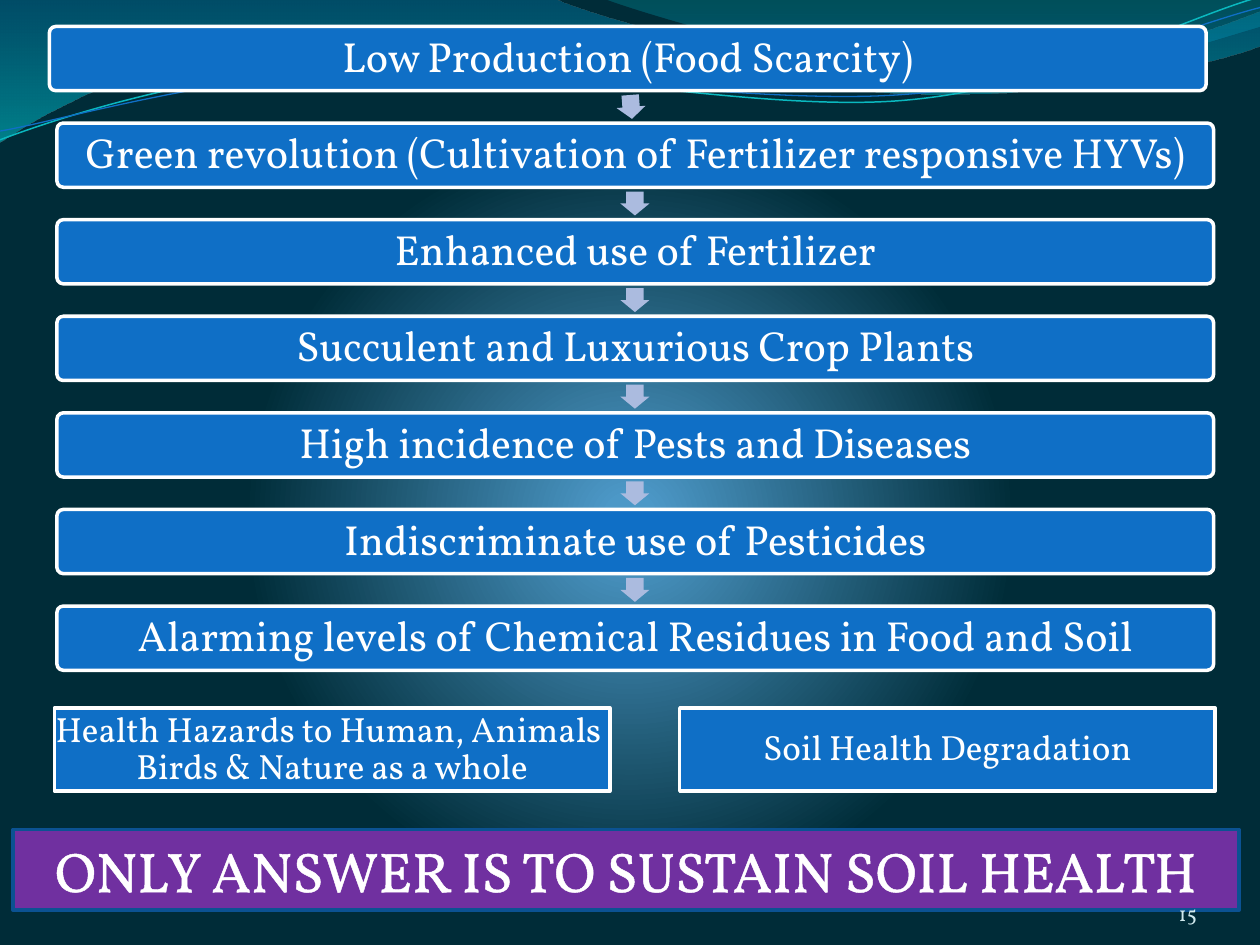
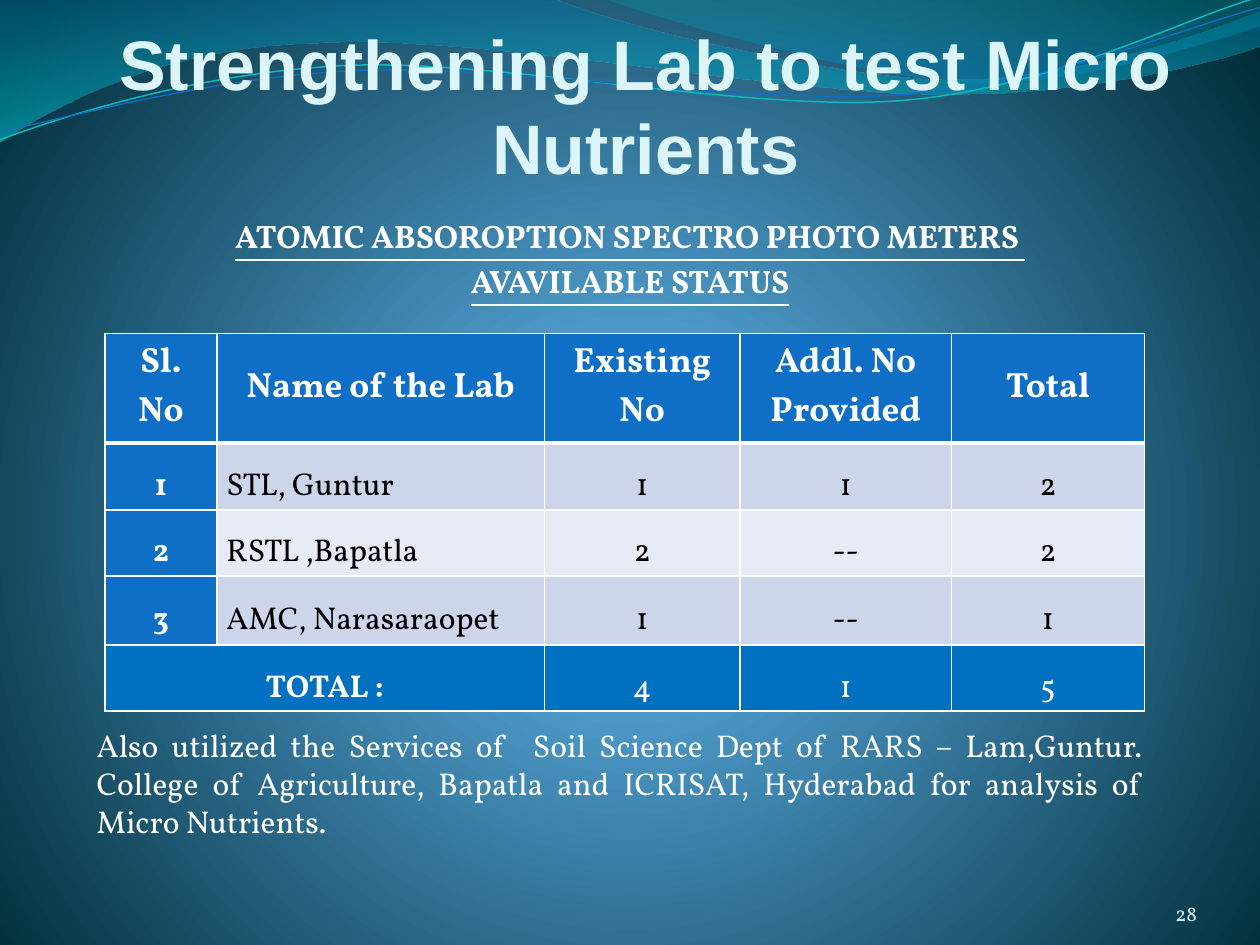
from pptx import Presentation
from pptx.dml.color import RGBColor
from pptx.enum.shapes import MSO_SHAPE
from pptx.enum.text import MSO_ANCHOR, MSO_AUTO_SIZE, PP_ALIGN
from pptx.oxml import parse_xml
from pptx.oxml.ns import nsdecls, qn
from pptx.util import Pt

RECT, ROUND, ARROW = MSO_SHAPE.RECTANGLE, MSO_SHAPE.ROUNDED_RECTANGLE, MSO_SHAPE.RIGHT_ARROW
LEFT, MID, RIGHT, JUST = PP_ALIGN.LEFT, PP_ALIGN.CENTER, PP_ALIGN.RIGHT, PP_ALIGN.JUSTIFY
TOP, CENTER, BOTTOM = MSO_ANCHOR.TOP, MSO_ANCHOR.MIDDLE, MSO_ANCHOR.BOTTOM
FIXED = MSO_AUTO_SIZE.NONE

# Shared look
FONT = "Vollkorn"
WHITE, BLACK, BLUE, SUM = "FFFFFF", "000000", "0F6FC6", "0070C0"
BANDS = ("CCD5EA", "E7EBF5")
PADS = (7.2, 3.6, 7.2, 3.6)
GLOW = '<a:path path="circle"><a:fillToRect l="10000" t="110000" r="10000" b="100000"/></a:path>'
DOWN = '<a:lin ang="5400000" scaled="1"/>'

# Waves in points: two numbers draw a line, six a curve
FILLS = [
    ([(0, "0074A1", 45), (100, "00C6CF", 55)],
     [(0, 0), (316.8, -0.7), (342.7, 12.2, 478.1, 45.4, 545.8, 45.4),
      (614.2, 45.4, 689.8, 18.7, 720, 6.5), (720.7, 25.9),
      (707.8, 31.7, 626.4, 54.7, 537.1, 54), (447.8, 54, 275, 20.2, 185, 24.5),
      (92.9, 25.9, 33.1, 59.8, -0.7, 81.4)]),
    ([(0, "00A1A9", 30), (80, "008BBF", 45)],
     [(344.9, -0.7), (366.5, 7.9, 491, 44.6, 553.7, 46.8),
      (616.3, 49.7, 691.9, 23, 720, 15.1), (720, 0)]),
]
LINES = [
    ("0AB8BF", 0.85,
     [(0, 79.9), (34.6, 67, 113.8, 41, 199.4, 37.4),
      (284.4, 33.8, 427, 64.1, 513.4, 57.6), (599.8, 51.1, 675.4, 10.8, 718.6, -1.4)]),
    (BLUE, 0.75,
     [(0, 74.9), (33.8, 69.1, 118.1, 44, 203.8, 40.3),
      (290.2, 36.7, 429.8, 60.5, 516.2, 54), (601.9, 48.2, 677.5, 15.1, 720, 4.3)]),
]

# Content
STEPS = [
    "Low Production (Food Scarcity)",
    "Green revolution (Cultivation of Fertilizer responsive HYVs)",
    "Enhanced use of Fertilizer",
    "Succulent and Luxurious Crop Plants",
    "High incidence of Pests and Diseases",
    "Indiscriminate use of Pesticides",
    "Alarming levels of Chemical Residues in Food and Soil",
]
ENDS = [
    ("Health Hazards to Human, Animals  Birds & Nature as a whole", 31, 317.5),
    ("Soil Health Degradation", 388.4, 306),
]
ANSWER = "ONLY ANSWER IS TO SUSTAIN SOIL HEALTH"
TITLE = "Strengthening Lab to test Micro Nutrients"
HEADS = ["ATOMIC ABSOROPTION SPECTRO PHOTO METERS ", "AVAVILABLE STATUS"]
LABS = [
    ("Sl. No", "Name of the Lab", "Existing No", "Addl. No Provided", "Total"),
    ("1", "STL, Guntur", "1", "1", "2"),
    ("2", "RSTL ,Bapatla", "2", "--", "2"),
    ("3", "AMC, Narasaraopet", "1", "--", "1"),
    ("TOTAL :", "", "4", "1", "5"),
]
WIDTHS = (64, 187.2, 111.6, 121, 110.2)
HEIGHTS = (62.6, 38.2, 30.2, 39.6, 30.2)
NOTE = ("Also utilized the Services of  Soil Science Dept of RARS – Lam,Guntur. "
        "College of Agriculture, Bapatla and ICRISAT, Hyderabad for analysis of "
        "Micro Nutrients.")


def rgb(code):
    return RGBColor.from_string(code)


def place(at):
    return [Pt(v) for v in at]


def blend(stops, shade):
    marks = "".join(
        f'<a:gs pos="{pos * 1000}"><a:srgbClr val="{code}"><a:alpha val="{alpha * 1000}"/>'
        f'</a:srgbClr></a:gs>' for pos, code, alpha in stops)
    return parse_xml(f'<a:gradFill {nsdecls("a")} rotWithShape="1"><a:gsLst>{marks}</a:gsLst>'
                     f'{shade}</a:gradFill>')


def stroke(tag, width):
    return parse_xml(f'<a:{tag} {nsdecls("a")} w="{Pt(width)}"><a:solidFill>'
                     f'<a:srgbClr val="{WHITE}"/></a:solidFill></a:{tag}>')


def swap(parent, grad):
    parent.replace(parent.find(qn("a:solidFill")), grad)


def back(slide, stops):
    slide.background.fill.solid()
    swap(slide.element.find(".//" + qn("p:bgPr")), blend(stops, GLOW))


def style(para, size, color=WHITE, align=MID, bold=False, face=FONT, space=None):
    para.alignment = align
    para.line_spacing = space
    font = para.font
    font.name, font.size, font.bold = face, Pt(size), bold
    font.color.rgb = rgb(color)


def setup(frame, pads, anchor, wrap=True):
    frame.word_wrap = wrap
    frame.auto_size = FIXED
    frame.vertical_anchor = anchor
    (frame.margin_left, frame.margin_top,
     frame.margin_right, frame.margin_bottom) = place(pads)


def box(slide, kind, at, fill, line=None):
    shape = slide.shapes.add_shape(kind, *place(at))
    shape.shadow.inherit = False
    shape.fill.solid()
    shape.fill.fore_color.rgb = rgb(fill)
    if line:
        shape.line.color.rgb = rgb(line)
        shape.line.width = Pt(2)
    else:
        shape.line.fill.background()
    return shape


def label(shape, text, size, pad=0, space=None, wrap=True):
    setup(shape.text_frame, (pad, 0, pad, 0), CENTER, wrap)
    para = shape.text_frame.paragraphs[0]
    para.text = text
    style(para, size, space=space)
    return para


def write(slide, at, text, size, color, align, anchor, pads=(0, 0, 0, 0)):
    frame = slide.shapes.add_textbox(*place(at)).text_frame
    setup(frame, pads, anchor)
    frame.paragraphs[0].text = text
    style(frame.paragraphs[0], size, color, align)


def page(slide, number):
    write(slide, (624, 500.2, 60, 28.8), number, 12, "D1EAEE", RIGHT, BOTTOM)


def curve(slide, parts, close):
    """Join the end points, then bend the segments that have control points."""
    ends = [place(part[-2:]) for part in parts]
    left, top = (min(axis) for axis in zip(*ends))
    pen = slide.shapes.build_freeform(*ends[0])
    pen.add_line_segments(ends[1:], close=close)
    shape = pen.convert_to_shape()
    shape.shadow.inherit = False
    for part, seg in zip(parts[1:], list(shape.element.iter(qn("a:lnTo")))):
        if len(part) == 6:
            dots = "".join(f'<a:pt x="{Pt(x) - left}" y="{Pt(y) - top}"/>'
                           for x, y in zip(part[0::2], part[1::2]))
            bend = parse_xml(f'<a:cubicBezTo {nsdecls("a")}>{dots}</a:cubicBezTo>')
            seg.getparent().replace(seg, bend)
    return shape


def waves(slide, master):
    """Draw the waves, then hand them to the master so every slide shows them."""
    made = []
    for stops, parts in FILLS:
        shape = curve(slide, parts, True)
        shape.fill.solid()
        shape.line.fill.background()
        swap(shape.element.spPr, blend(stops, DOWN))
        made.append(shape)
    for color, width, parts in LINES:
        shape = curve(slide, parts, False)
        shape.fill.background()
        shape.line.color.rgb = rgb(color)
        shape.line.width = Pt(width)
        made.append(shape)
    tree = master.element.find(".//" + qn("p:spTree"))
    for i, shape in enumerate(made):
        tree.insert(2 + i, shape.element)


def edge(cell, **widths):
    props = cell._tc.get_or_add_tcPr()
    for i, side in enumerate("LRTB"):
        props.insert(i, stroke("ln" + side, widths.get(side, 1)))


def chain(slide):
    # Steps and the arrows between them
    for i, text in enumerate(STEPS):
        shift = 0 if i else -4.3
        top = 15.1 + 55.2 * i
        bar = box(slide, ROUND, (32.5 + shift, top, 661, 36.7), BLUE, WHITE)
        bar.adjustments[0] = 0.1
        label(bar, text, 24, 7.2, 0.9)
        if i < len(STEPS) - 1:
            wide, high = 13.7, 16.6
            mid = 362.8 if i else 360.6
            arrow = box(slide, ARROW, (mid - wide / 2, top + 46 - high / 2, wide, high), "ABBBDF")
            arrow.adjustments[0] = 0.6
            arrow.rotation = 90 if i else 85.5
    # Results and answer
    for text, left, wide in ENDS:
        label(box(slide, RECT, (left, 404.6, wide, 47.5), BLUE, WHITE), text, 20, space=0.9)
    banner = box(slide, RECT, (7.5, 474, 700.6, 46), "7030A0", "0B5292")
    para = label(banner, ANSWER, 32, wrap=False)
    para.runs[0].font._element.insert(0, stroke("ln", 1.45))


def grid(slide):
    rows, cols = len(LABS), len(WIDTHS)
    at = (60, 190.6, sum(WIDTHS), sum(HEIGHTS))
    table = slide.shapes.add_table(rows, cols, *place(at)).table
    for col, wide in zip(table.columns, WIDTHS):
        col.width = Pt(wide)
    for r, high in enumerate(HEIGHTS):
        table.rows[r].height = Pt(high)
        head, last = r == 0, r == rows - 1
        for c in range(cols):
            cell = table.cell(r, c)
            key = head or c == 0
            fill = SUM if last else BLUE if key else BANDS[(r - 1) % 2]
            cell.fill.solid()
            cell.fill.fore_color.rgb = rgb(fill)
            cell.vertical_anchor = CENTER
            cell.margin_left = cell.margin_right = Pt(5.4)
            cell.margin_top = cell.margin_bottom = 0
            para = cell.text_frame.paragraphs[0]
            para.text = LABS[r][c]
            style(para, 20 if head else 18, WHITE if key or last else BLACK,
                  LEFT if c == 1 and not head else MID, key, space=None if head else 1.5)
            edge(cell, T=3 if r == 1 else 1, B=3 if head else 1)
    table.cell(rows - 1, 0).merge(table.cell(rows - 1, 1))


def status(slide):
    # Title and heading
    title, body = slide.shapes.title, slide.placeholders[1]
    title.left, title.top, title.width, title.height = place((54, 51.8, 630, 56.2))
    setup(title.text_frame, (0, 3.6, 0, 0), BOTTOM)
    title.text_frame.text = TITLE
    style(title.text_frame.paragraphs[0], 40, "DBF5F9", bold=True, face="Arial")
    body.left, body.top, body.width, body.height = place((36, 119.8, 648, 54))
    setup(body.text_frame, PADS, TOP)
    body.text_frame.text = "\n".join(HEADS)
    for para in body.text_frame.paragraphs:
        style(para, 18.5, bold=True)
        para.font.underline = True
        para.space_before = Pt(3.5)
        props = para._p.get_or_add_pPr()
        props.set("marL", "0")
        props.set("indent", "0")
        props.find(qn("a:defRPr")).addprevious(parse_xml(f'<a:buNone {nsdecls("a")}/>'))
    # Table and note
    grid(slide)
    write(slide, (48.2, 411.5, 612, 72), NOTE, 18, WHITE, JUST, TOP, PADS)


def main():
    deck = Presentation()
    deck.slide_width, deck.slide_height = Pt(720), Pt(540)
    first = deck.slides.add_slide(deck.slide_layouts[6])
    waves(first, deck.slide_master)
    back(first, [(3, "4C98C7", 100), (49, "002C38", 100)])
    chain(first)
    page(first, "15")
    second = deck.slides.add_slide(deck.slide_layouts[1])
    back(second, [(0, "4AA0D6", 100), (25, "4C98C7", 100), (100, "002C38", 100)])
    status(second)
    page(second, "28")
    deck.save("out.pptx")


if __name__ == "__main__":
    main()
